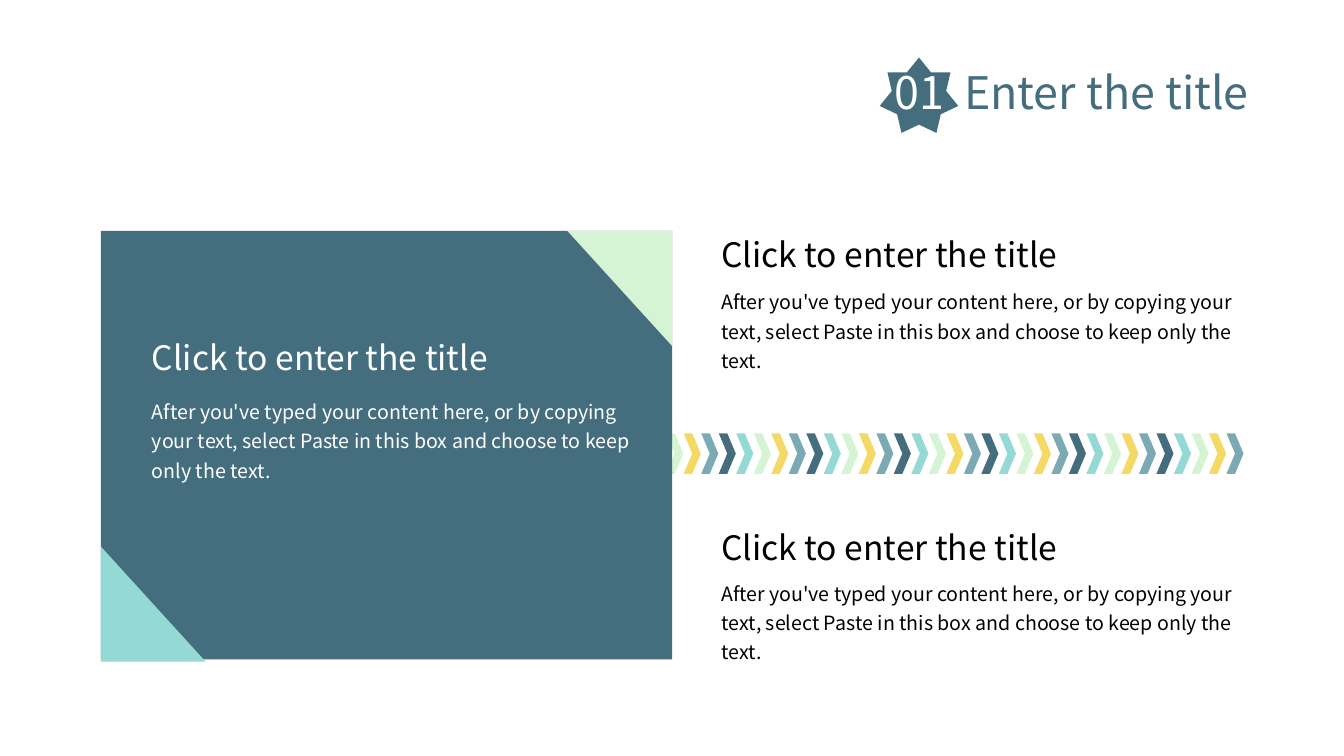
import pptx
import pptx.dml.color
import pptx.enum.shapes
import pptx.enum.text
import pptx.util

Cm = pptx.util.Cm
SHAPE = pptx.enum.shapes.MSO_SHAPE

FONT = "Noto Sans CJK SC"
COLORS = {
    "slate": "446E7E",
    "steel": "7BAAB4",
    "aqua": "94D9D4",
    "mint": "D5F4D3",
    "yellow": "F4D964",
    "white": "FFFFFF",
    "black": "000000",
}

NUMBER, TITLE = "01", "Enter the title"
HEADING = "Click to enter the title"
BODY = ("After you've typed your content here, or by copying your text, "
        "select Paste in this box and choose to keep only the text.")

# heading, body, left, heading top, body top, body width, colour (cm)
SECTIONS = [
    (HEADING, BODY, 17.93, 5.51, 7.04, 13.74, "black"),
    (HEADING, BODY, 17.93, 12.9, 14.38, 13.74, "black"),
    (HEADING, BODY, 3.58, 8.1, 9.8, 12.78, "white"),
]

PANEL = (2.54, 5.82, 14.4, 10.8)
CORNER_W, CORNER_H = 2.64, 2.9

CHEVRON_CYCLE = ["mint", "yellow", "steel", "slate", "aqua"]
CHEVRON_COUNT = 33
CHEVRON_FIRST, CHEVRON_LAST = 16.79, 30.91
CHEVRON_TOP, CHEVRON_W, CHEVRON_H = 10.92, 0.43, 1.02


def rgb(name):
    return pptx.dml.color.RGBColor.from_string(COLORS[name])


def add_filled(s, kind, box, color, rotation=0):
    sp = s.shapes.add_shape(kind, *map(Cm, box))
    sp.shadow.inherit = False
    sp.fill.solid()
    sp.fill.fore_color.rgb = rgb(color)
    sp.line.fill.background()
    sp.rotation = rotation
    return sp


def write(sp, text, box, size, color, spacing=1.0):
    """Place a text box or placeholder and fill it with one formatted paragraph."""
    sp.left, sp.top, sp.width, sp.height = map(Cm, box)
    tf = sp.text_frame
    tf.word_wrap = True
    tf.auto_size = pptx.enum.text.MSO_AUTO_SIZE.NONE
    tf.vertical_anchor = pptx.enum.text.MSO_ANCHOR.TOP
    p = tf.paragraphs[0]
    p.alignment = pptx.enum.text.PP_ALIGN.LEFT
    p.line_spacing = spacing
    r = p.add_run()
    r.text = text
    r.font.name = FONT
    r.font.size = pptx.util.Pt(size)
    r.font.color.rgb = rgb(color)


def add_text(s, text, box, **fmt):
    write(s.shapes.add_textbox(0, 0, 0, 0), text, box, **fmt)


def add_chevrons(s):
    step = (CHEVRON_LAST - CHEVRON_FIRST) / (CHEVRON_COUNT - 1)
    for i in range(CHEVRON_COUNT):
        box = (CHEVRON_FIRST + i * step, CHEVRON_TOP, CHEVRON_W, CHEVRON_H)
        add_filled(s, SHAPE.CHEVRON, box, CHEVRON_CYCLE[i % len(CHEVRON_CYCLE)])


def add_panel(s):
    left, top, width, height = PANEL
    add_filled(s, SHAPE.RECTANGLE, PANEL, "slate")
    add_filled(s, SHAPE.RIGHT_TRIANGLE,
               (left + width - CORNER_W, top, CORNER_W, CORNER_H), "mint", rotation=180)
    add_filled(s, SHAPE.RIGHT_TRIANGLE,
               (left, top + height - CORNER_H + 0.05, CORNER_W, CORNER_H), "aqua")


def main():
    prs = pptx.Presentation()
    prs.slide_width, prs.slide_height = Cm(33.87), Cm(19.05)
    s = prs.slides.add_slide(prs.slide_layouts[5])

    add_chevrons(s)
    add_panel(s)
    add_filled(s, SHAPE.STAR_7_POINT, (22.17, 1.45, 1.98, 1.9), "slate")
    add_text(s, NUMBER, (22.3, 1.5, 1.9, 1.63), size=32, color="white")
    write(s.shapes.title, TITLE, (24.04, 1.5, 9, 1.63), size=32, color="slate")

    for heading, body, left, heading_top, body_top, width, color in SECTIONS:
        add_text(s, heading, (left, heading_top, 12, 1.42),
                 size=24, color=color, spacing=1.25)
        add_text(s, body, (left, body_top, width, 2.5),
                 size=14, color=color, spacing=1.25)

    prs.save("out.pptx")


if __name__ == "__main__":
    main()
